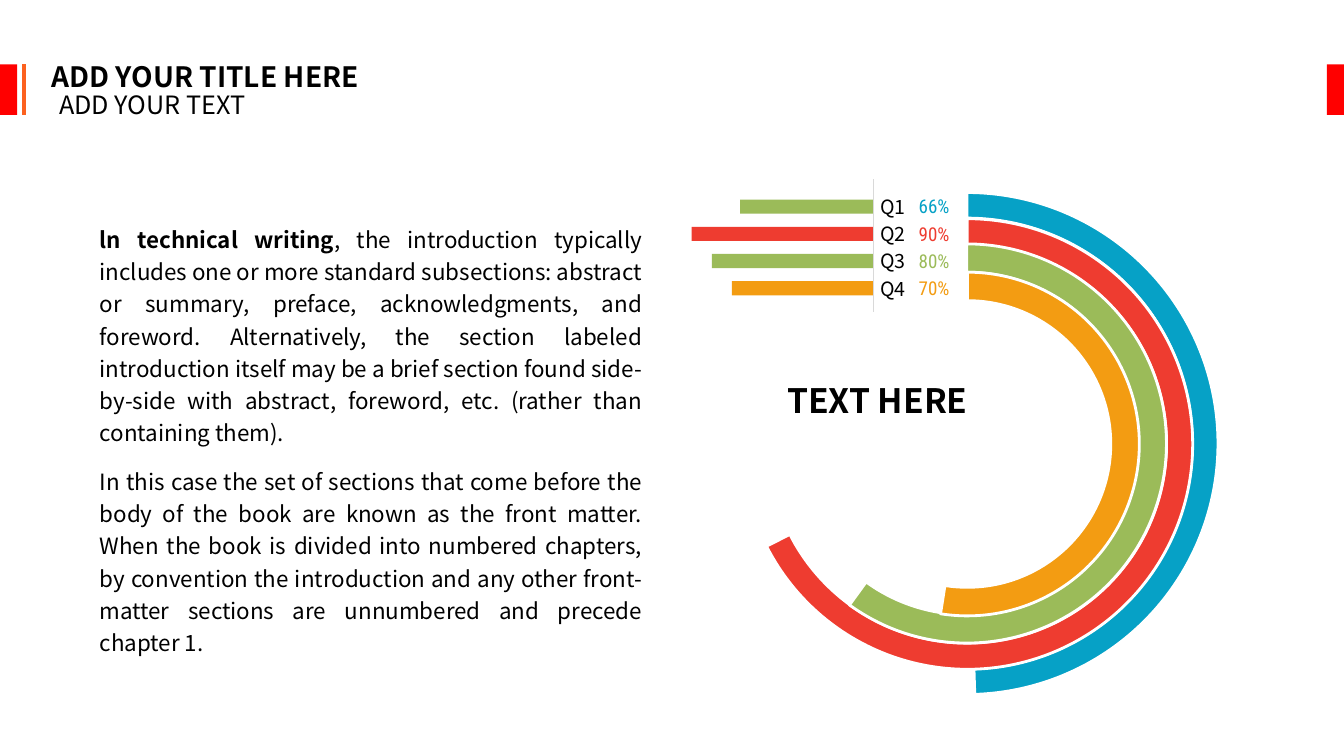
from dataclasses import dataclass

from lxml import etree
from pptx import Presentation
from pptx.dml.color import RGBColor
from pptx.enum.shapes import MSO_CONNECTOR, MSO_SHAPE
from pptx.enum.text import MSO_ANCHOR, MSO_AUTO_SIZE, PP_ALIGN
from pptx.oxml.ns import qn
from pptx.shapes.autoshape import Shape
from pptx.slide import Slide
from pptx.util import Emu, Pt

RECTANGLE, BLOCK_ARC = MSO_SHAPE.RECTANGLE, MSO_SHAPE.BLOCK_ARC
STRAIGHT = MSO_CONNECTOR.STRAIGHT
LEFT, CENTER, JUSTIFY = PP_ALIGN.LEFT, PP_ALIGN.CENTER, PP_ALIGN.JUSTIFY
TOP, MIDDLE = MSO_ANCHOR.TOP, MSO_ANCHOR.MIDDLE
FIT_SHAPE, NO_FIT = MSO_AUTO_SIZE.SHAPE_TO_FIT_TEXT, MSO_AUTO_SIZE.NONE

PX = 9144  # EMU, 100 px to the inch
PAGE_WIDTH, PAGE_HEIGHT = 1333, 750


@dataclass(frozen=True)
class Theme:
    blue: str = "06A1C6"
    red: str = "EE3C30"
    green: str = "9BBB59"
    amber: str = "F39C12"
    accent: str = "FF0000"
    orange: str = "FC611F"
    axis: str = "D9D9D9"
    white: str = "FFFFFF"
    black: str = "000000"
    font: str = "Noto Sans CJK SC"
    percent_font: str = "Roboto Condensed"
    title: float = 20
    subtitle: float = 18
    body: float = 16
    heading: float = 24
    label: float = 14
    percent: float = 13.6


THEME = Theme()


@dataclass(frozen=True)
class Quarter:
    name: str
    percent: int
    ring_color: str
    bar_color: str
    diameter: int
    thickness: float  # share of the diameter


@dataclass(frozen=True)
class TextStyle:
    size: float
    color: str = THEME.black
    font: str = THEME.font
    bold: bool = False
    align: PP_ALIGN = LEFT
    anchor: MSO_ANCHOR = TOP
    wrap: bool = False
    fit: MSO_AUTO_SIZE = NO_FIT
    inset: bool = True
    line_spacing: float = 1.0


QUARTERS = (
    Quarter("Q1", 66, THEME.blue, THEME.green, 498, 0.051),
    Quarter("Q2", 90, THEME.red, THEME.red, 447, 0.058),
    Quarter("Q3", 80, THEME.green, THEME.green, 396, 0.071),
    Quarter("Q4", 70, THEME.amber, THEME.amber, 341, 0.083),
)
RING_CENTER_X, RING_CENTER_Y = 959, 440
FULL_SWEEP = 270  # degrees that stand for 100%
AXIS_X = 866
ROW_TOP, ROW_PITCH = 193, 27

TITLE = TextStyle(THEME.title, bold=True, align=CENTER, fit=FIT_SHAPE)
SUBTITLE = TextStyle(THEME.subtitle, fit=FIT_SHAPE)
HEADING = TextStyle(THEME.heading, bold=True, anchor=MIDDLE, wrap=True)
BODY = TextStyle(THEME.body, align=JUSTIFY, wrap=True, fit=FIT_SHAPE, line_spacing=1.2)
LABEL = TextStyle(THEME.label, align=CENTER, anchor=MIDDLE, inset=False)

LEAD = "ln technical writing"
INTRODUCTION = (
    ", the introduction typically includes one or more standard subsections: "
    "abstract or summary, preface, acknowledgments, and foreword. Alternatively, "
    "the section labeled introduction itself may be a brief section found "
    "side-by-side with abstract, foreword, etc. (rather than containing them)."
)
FRONT_MATTER = (
    "In this case the set of sections that come before the body of the book are "
    "known as the front matter. When the book is divided into numbered chapters, "
    "by convention the introduction and any other front-matter sections are "
    "unnumbered and precede chapter 1."
)


def px(*lengths: int) -> list[Emu]:
    """Turn px lengths into EMU."""
    return [Emu(length * PX) for length in lengths]


def add_block(page: Slide, kind: MSO_SHAPE, left: int, top: int,
              width: int, height: int, color: str) -> Shape:
    """Add a filled preset shape without outline or shadow."""
    block = page.shapes.add_shape(kind, *px(left, top, width, height))
    block.shadow.inherit = False
    block.fill.solid()
    block.fill.fore_color.rgb = RGBColor.from_string(color)
    block.line.fill.background()
    return block


def add_vertical_line(page: Slide, x: int, top: int, bottom: int,
                      color: str, weight: float) -> None:
    line = page.shapes.add_connector(STRAIGHT, *px(x, top, x, bottom))
    line.line.color.rgb = RGBColor.from_string(color)
    line.line.width = Pt(weight)
    etree.SubElement(line._element.spPr, qn("a:effectLst"))


def add_text(page: Slide, left: int, top: int, width: int, height: int,
             text: str, style: TextStyle, lead: str = "") -> None:
    """Add a one-paragraph text box, with an optional bold lead."""
    box = page.shapes.add_textbox(*px(left, top, width, height))
    frame = box.text_frame
    frame.word_wrap = style.wrap
    frame.auto_size = style.fit
    frame.vertical_anchor = style.anchor
    if not style.inset:
        frame.margin_left = frame.margin_right = 0
        frame.margin_top = frame.margin_bottom = 0
    para = frame.paragraphs[0]
    para.alignment = style.align
    para.line_spacing = style.line_spacing
    para.font.name = style.font
    para.font.size = Pt(style.size)
    para.font.bold = style.bold
    para.font.color.rgb = RGBColor.from_string(style.color)
    if lead:
        span = para.add_run()
        span.text = lead
        span.font.bold = True
    para.add_run().text = text


def add_ring(page: Slide, quarter: Quarter) -> None:
    """Add an arc that starts at twelve o'clock and sweeps clockwise."""
    radius = quarter.diameter // 2
    ring = add_block(page, BLOCK_ARC, RING_CENTER_X - radius, RING_CENTER_Y - radius,
                     quarter.diameter, quarter.diameter, quarter.ring_color)
    ring.line.color.rgb = RGBColor.from_string(THEME.white)
    ring.line.width = Pt(2)
    end_angle = FULL_SWEEP * quarter.percent / 100 - 90
    # Angles are stored in 1/60000 degree, adjustments in units of 100000.
    ring.adjustments[0] = 270 * 0.6
    ring.adjustments[1] = end_angle * 0.6
    ring.adjustments[2] = quarter.thickness


def add_row(page: Slide, quarter: Quarter, top: int) -> None:
    """Add a quarter's bar, name and percentage."""
    length = 2 * quarter.percent
    add_block(page, RECTANGLE, AXIS_X - length, top + 5, length, 14, quarter.bar_color)
    add_text(page, 863, top, 45, 24, quarter.name, LABEL)
    percent_style = TextStyle(THEME.percent, quarter.ring_color, THEME.percent_font,
                              align=CENTER, anchor=MIDDLE, inset=False)
    add_text(page, 910, top + 2, 33, 19, f"{quarter.percent}%", percent_style)


def add_header(page: Slide) -> None:
    for left in (0, PAGE_WIDTH - 17):
        add_block(page, RECTANGLE, left, 64, 17, 50, THEME.accent)
    add_vertical_line(page, 24, 64, 114, THEME.orange, 3)
    add_text(page, 33, 54, 341, 44, "ADD YOUR TITLE HERE", TITLE)
    add_text(page, 49, 84, 224, 40, "ADD YOUR TEXT", SUBTITLE)


def main() -> None:
    deck = Presentation()
    deck.slide_width, deck.slide_height = px(PAGE_WIDTH, PAGE_HEIGHT)
    page = deck.slides.add_slide(deck.slide_layouts[6])
    add_header(page)
    add_text(page, 89, 214, 558, 204, INTRODUCTION, BODY, LEAD)
    add_text(page, 89, 454, 558, 172, FRONT_MATTER, BODY)
    for index, quarter in enumerate(QUARTERS):
        add_ring(page, quarter)
        add_row(page, quarter, ROW_TOP + index * ROW_PITCH)
    add_vertical_line(page, AXIS_X, 178, 310, THEME.axis, 0.75)
    add_text(page, 771, 383, 299, 27, "TEXT HERE", HEADING)
    deck.save("out.pptx")


if __name__ == "__main__":
    main()
